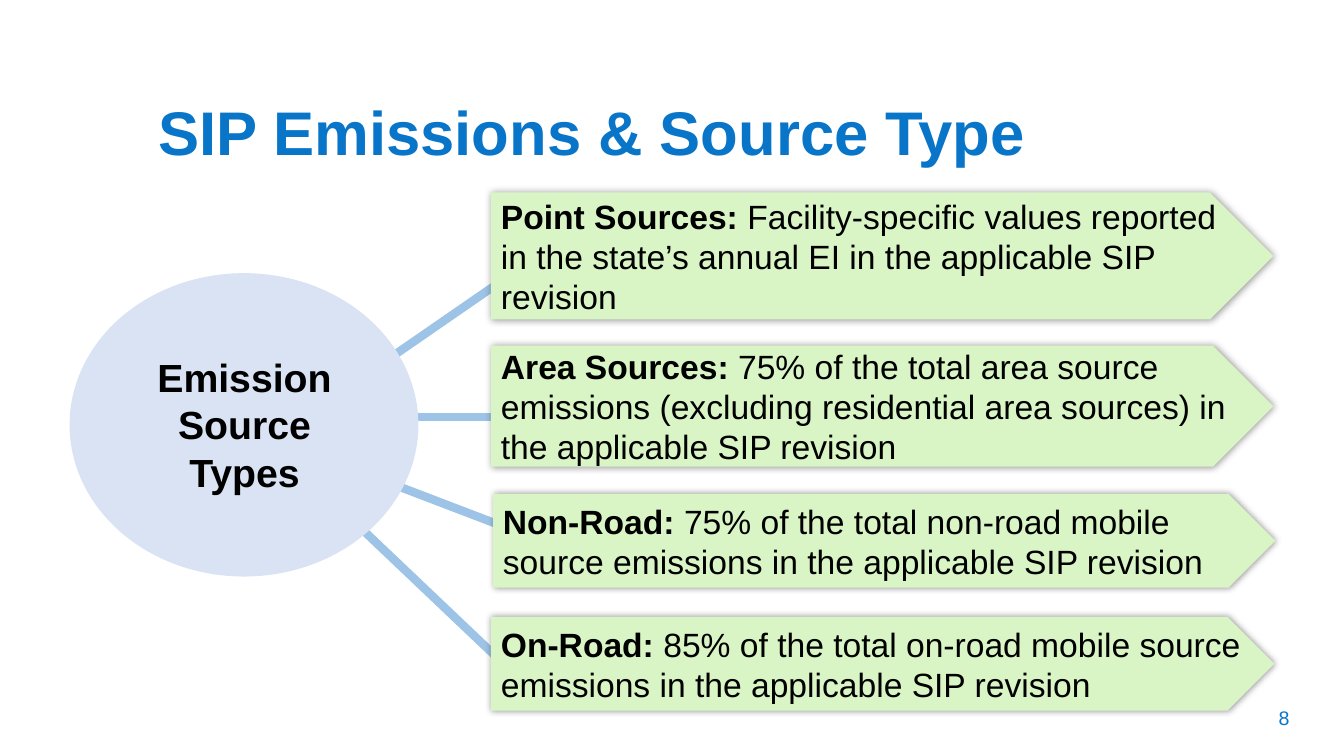
import pptx
import pptx.util
import pptx.oxml
import pptx.oxml.ns
import pptx.dml.color
import pptx.enum.shapes
import pptx.enum.text

SHAPE = pptx.enum.shapes.MSO_SHAPE
ALIGN = pptx.enum.text.PP_ALIGN
ANCHOR = pptx.enum.text.MSO_ANCHOR
BLUE, SKY, GREEN, PALE, BLACK = "0875C8", "9DC3E6", "D9F5C5", "DAE3F3", "000000"


def px(n):
    """100 px to the inch."""
    return pptx.util.Emu(n * 9144)


def rgb(value):
    return pptx.dml.color.RGBColor.from_string(value)


class SlideBuilder:
    font = "Arial"

    def __init__(self, prs):
        self.slide = prs.slides.add_slide(prs.slide_layouts[6])

    def fill_text(self, tf, runs, size, color=BLACK, align=ALIGN.LEFT, spacing=None):
        """Fill a frame with one paragraph of (text, bold) runs."""
        tf.word_wrap = True
        p = tf.paragraphs[0]
        p.alignment = align
        if spacing:
            p.line_spacing = spacing
        for text, bold in runs:
            r = p.add_run()
            r.text = text
            r.font.name = self.font
            r.font.size = pptx.util.Pt(size)
            r.font.bold = bold
            r.font.color.rgb = rgb(color)

    def text(self, box, text, size, color=BLACK, bold=True, align=ALIGN.CENTER, spacing=None):
        sp = self.slide.shapes.add_textbox(*map(px, box))
        self.fill_text(sp.text_frame, [(text, bold)], size, color, align, spacing)

    def shape(self, kind, box, fill):
        sp = self.slide.shapes.add_shape(kind, *map(px, box))
        sp.shadow.inherit = False
        sp.fill.solid()
        sp.fill.fore_color.rgb = rgb(fill)
        sp.line.fill.background()
        return sp

    def line(self, start, end):
        cx = self.slide.shapes.add_connector(
            pptx.enum.shapes.MSO_CONNECTOR.STRAIGHT, *map(px, start + end))
        cx.line.color.rgb = rgb(SKY)
        cx.line.width = pptx.util.Pt(6)
        cx._element.spPr.append(pptx.oxml.parse_xml(
            f'<a:effectLst {pptx.oxml.ns.nsdecls("a")}/>'))

    def arrow_box(self, box, label, detail):
        sp = self.shape(SHAPE.PENTAGON, box, GREEN)
        # Soft shadow on all sides
        effects = sp._element.spPr.find(pptx.oxml.ns.qn("a:effectLst"))
        effects.append(pptx.oxml.parse_xml(
            f'<a:outerShdw {pptx.oxml.ns.nsdecls("a")} blurRad="{pptx.util.Pt(5)}" dist="0" '
            'dir="0" algn="ctr" rotWithShape="0"><a:srgbClr val="000000">'
            '<a:alpha val="40000"/></a:srgbClr></a:outerShdw>'))
        sp.text_frame.vertical_anchor = ANCHOR.MIDDLE
        self.fill_text(sp.text_frame, [(label + " ", True), (detail, False)], 24)


SOURCES = [
    ((487, 191, 776, 126), "Point Sources:",
     "Facility-specific values reported in the state’s annual EI in the applicable SIP revision"),
    ((487, 343, 776, 120), "Area Sources:",
     "75% of the total area source emissions (excluding residential area sources) "
     "in the applicable SIP revision"),
    ((489, 490, 776, 93), "Non-Road:",
     "75% of the total non-road mobile source emissions in the applicable SIP revision"),
    ((487, 612, 777, 93), "On-Road:",
     "85% of the total on-road mobile source emissions in the applicable SIP revision"),
]
SPOKES = [((361, 373), (500, 277)), ((395, 414), (517, 414)),
          ((365, 471), (509, 526)), ((317, 485), (500, 659))]


def main():
    prs = pptx.Presentation()
    prs.slide_width, prs.slide_height = px(1333), px(750)
    s = SlideBuilder(prs)

    # Page number and title
    s.text((1229, 695, 89, 40), "8", 14, BLUE, bold=False)
    s.text((147, 97, 1031, 145), "SIP Emissions & Source Type", 44, BLUE,
           align=ALIGN.LEFT, spacing=0.9)

    # Spokes, then the boxes that cover their ends
    for start, end in SPOKES:
        s.line(start, end)
    for box, label, detail in SOURCES:
        s.arrow_box(box, label, detail)

    # Hub
    s.shape(SHAPE.OVAL, (69, 271, 346, 301), PALE)
    s.text((127, 346, 231, 151), "Emission Source Types", 28)

    prs.save("out.pptx")


if __name__ == "__main__":
    main()
